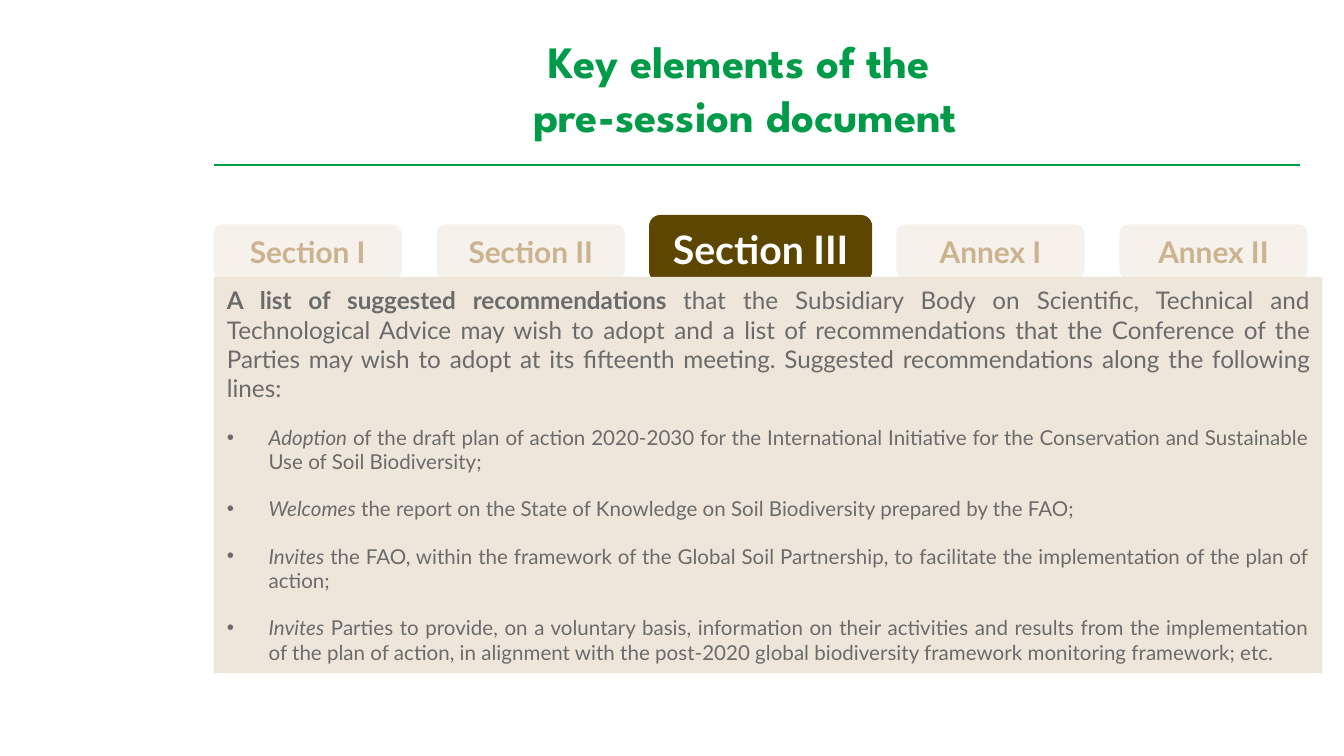
from lxml import etree
from pptx import Presentation
from pptx.dml.color import RGBColor
from pptx.enum.shapes import MSO_CONNECTOR, MSO_SHAPE
from pptx.enum.text import MSO_ANCHOR, PP_ALIGN
from pptx.oxml.ns import qn
from pptx.util import Inches, Pt

GREEN = RGBColor(0x00, 0x9B, 0x48)
CREAM = RGBColor(0xF6, 0xF1, 0xEA)
TAN = RGBColor(0xCB, 0xB3, 0x8F)
BROWN = RGBColor(0x5C, 0x46, 0x00)
WHITE = RGBColor(0xFF, 0xFF, 0xFF)
BEIGE = RGBColor(0xEE, 0xE6, 0xDA)
GREY = RGBColor(0x6B, 0x6B, 0x6B)

LEFT = 1.59
SLIDE_WIDTH = 10
SLIDE_HEIGHT = SLIDE_WIDTH * 9 / 16
INTRO = (
    "A list of suggested recommendations ",
    "that the Subsidiary Body on Scientific, Technical and Technological Advice may wish "
    "to adopt and a list of recommendations that the Conference of the Parties may wish to "
    "adopt at its fifteenth meeting. Suggested recommendations along the following lines:",
)
RECOMMENDATIONS = [
    ("Adoption", " of the draft plan of action 2020-2030 for the International Initiative "
     "for the Conservation and Sustainable Use of Soil Biodiversity;"),
    ("Welcomes", " the report on the State of Knowledge on Soil Biodiversity prepared by "
     "the FAO;"),
    ("Invites", " the FAO, within the framework of the Global Soil Partnership, to "
     "facilitate the implementation of the plan of action;"),
    ("Invites", " Parties to provide, on a voluntary basis, information on their activities "
     "and results from the implementation of the plan of action, in alignment with the "
     "post-2020 global biodiversity framework monitoring framework; etc."),
]


def style(paragraph, font_name, size, color, align, bold=None):
    paragraph.alignment = align
    font = paragraph.font
    font.name, font.size, font.bold = font_name, Pt(size), bold
    font.color.rgb = color


def add_panel(slide, kind, left, top, width, height, fill):
    panel = slide.shapes.add_shape(
        kind, Inches(left), Inches(top), Inches(width), Inches(height))
    panel.shadow.inherit = False
    panel.fill.solid()
    panel.fill.fore_color.rgb = fill
    panel.line.fill.background()
    panel.text_frame.word_wrap = True
    return panel


def add_heading(slide, left, top, width, height):
    heading = slide.shapes.add_textbox(
        Inches(left), Inches(top), Inches(width), Inches(height))
    frame = heading.text_frame
    frame.word_wrap = True
    frame.vertical_anchor = MSO_ANCHOR.MIDDLE
    frame.text = "Key elements of the \vpre-session document"
    style(frame.paragraphs[0], "League Spartan", 24, GREEN, PP_ALIGN.CENTER, True)


def add_rule(slide, left, top, width):
    rule = slide.shapes.add_connector(
        MSO_CONNECTOR.STRAIGHT, Inches(left), Inches(top), Inches(left + width), Inches(top))
    rule.line.color.rgb = GREEN
    rule.line.width = Pt(1)
    etree.SubElement(rule._element.spPr, qn("a:effectLst"))


def add_tab(slide, label, left, top, width, height, size, color, fill):
    tab = add_panel(slide, MSO_SHAPE.ROUNDED_RECTANGLE, left, top, width, height, fill)
    tab.text_frame.text = label
    style(tab.text_frame.paragraphs[0], "Lato", size, color, PP_ALIGN.CENTER, True)


def add_tabs(slide, left, top, width):
    """Place a pair of tabs at each end and the larger active tab between them."""
    tab_width, pitch, active_width = 1.4, 1.66, 1.66
    right_pair = left + width - tab_width - pitch
    for pair_left, labels in (
        (left, ("Section I", "Section II")),
        (right_pair, ("Annex I", "Annex II")),
    ):
        for index, label in enumerate(labels):
            add_tab(slide, label, pair_left + index * pitch, top + 0.07,
                    tab_width, 0.41, 16, TAN, CREAM)
    active_left = left + (width - active_width) / 2
    add_tab(slide, "Section III", active_left, top, active_width, 0.5, 21, WHITE, BROWN)


def add_bullet(paragraph):
    properties = paragraph._p.get_or_add_pPr()
    properties.set("marL", str(Inches(0.31)))
    properties.set("indent", str(-Inches(0.31)))
    etree.SubElement(properties, qn("a:buFont"), typeface="Arial")
    etree.SubElement(properties, qn("a:buChar"), char="•")


def add_recommendations(slide, left, top, width, height):
    body = add_panel(slide, MSO_SHAPE.RECTANGLE, left, top, width, height, BEIGE)
    frame = body.text_frame
    frame.vertical_anchor = MSO_ANCHOR.MIDDLE
    for index, (lead, rest) in enumerate([INTRO] + RECOMMENDATIONS):
        intro = index == 0
        paragraph = frame.paragraphs[0] if intro else frame.add_paragraph()
        if not intro:
            add_bullet(paragraph)
            paragraph.space_before = Pt(6)
        paragraph.space_after = Pt(6)
        style(paragraph, "Lato", 13 if intro else 11, GREY, PP_ALIGN.JUSTIFY)
        lead_run = paragraph.add_run()
        lead_run.text = lead
        if intro:
            lead_run.font.bold = True
        else:
            lead_run.font.italic = True
        paragraph.add_run().text = rest


def main():
    deck = Presentation()
    deck.slide_width, deck.slide_height = Inches(SLIDE_WIDTH), Inches(SLIDE_HEIGHT)
    slide = deck.slides.add_slide(deck.slide_layouts[6])
    add_rule(slide, LEFT, 1.23, 8.08)
    add_heading(slide, LEFT, 0.18, 7.91, 0.94)
    add_tabs(slide, LEFT, 1.6, 8.14)
    add_recommendations(slide, LEFT, 2.06, 8.25, 2.95)
    deck.save("out.pptx")


if __name__ == "__main__":
    main()
